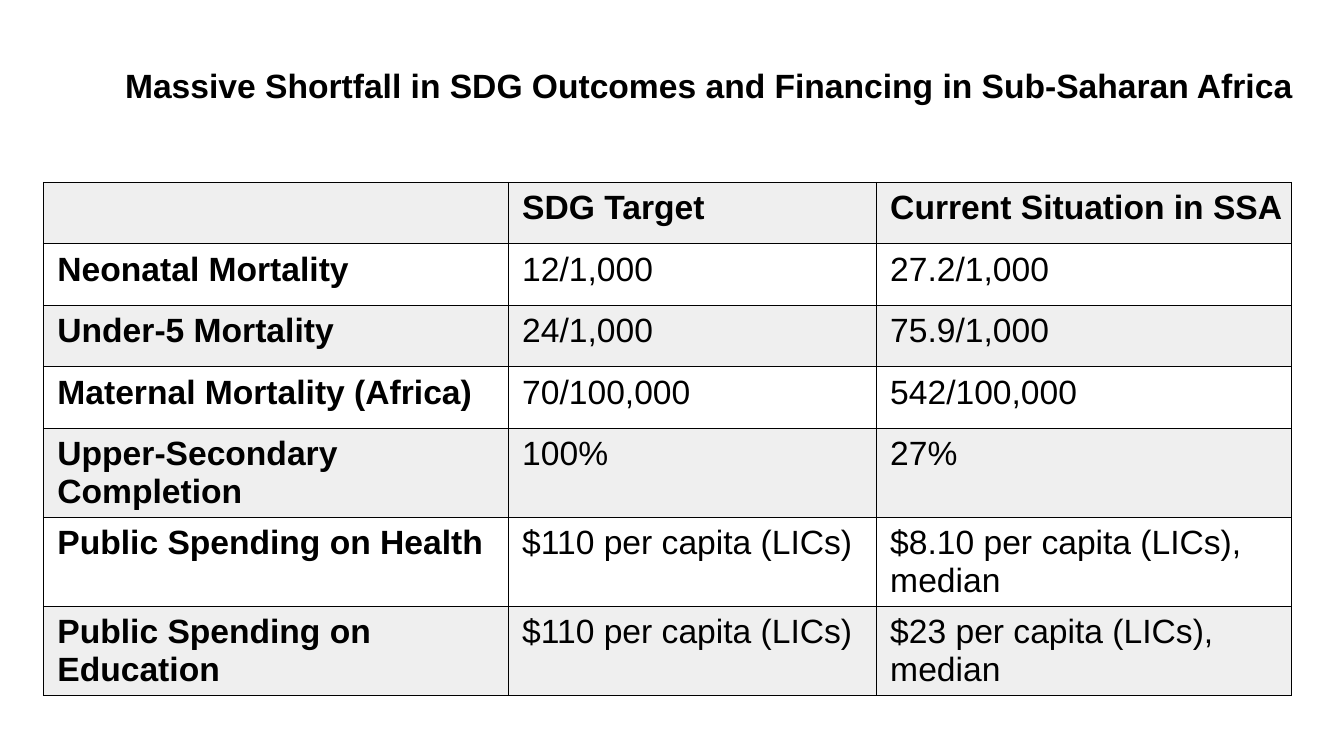
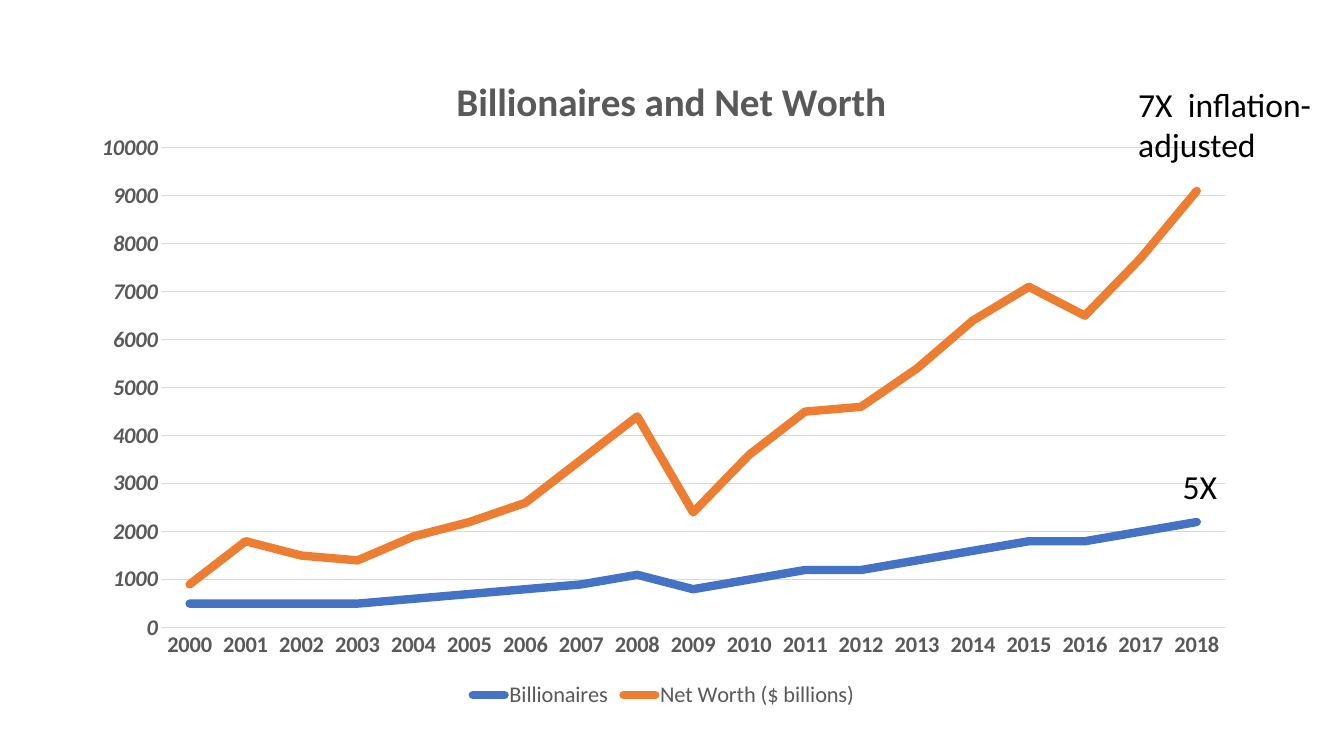
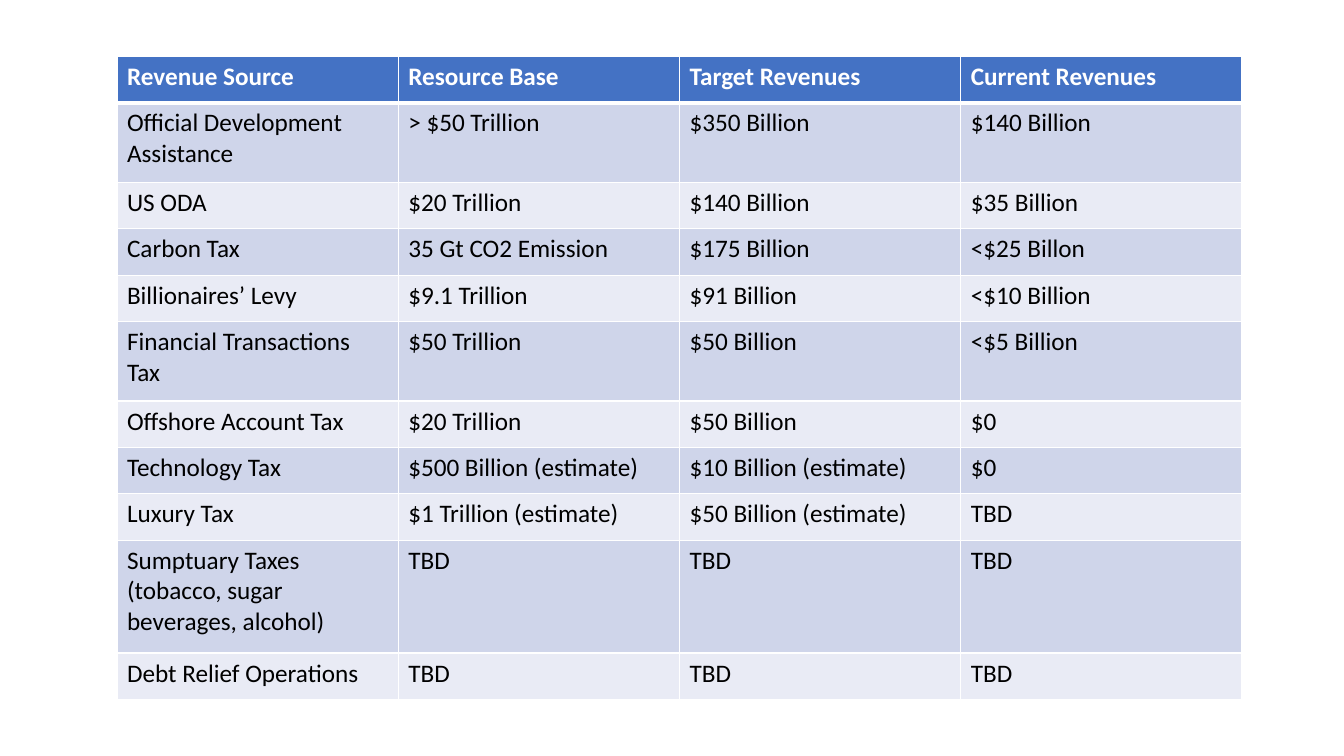
import dataclasses
import typing

import lxml.etree
import pptx
import pptx.chart.data
import pptx.dml.color
import pptx.enum.chart
import pptx.enum.text
import pptx.oxml
import pptx.oxml.ns
import pptx.util

Inches = pptx.util.Inches
Pt = pptx.util.Pt
qn = pptx.oxml.ns.qn


# Shared look
@dataclasses.dataclass(frozen=True)
class Theme:
    black: str = "000000"
    white: str = "FFFFFF"
    pale: str = "EFEFEF"
    blue: str = "4472C4"
    orange: str = "ED7D31"
    band: str = "CFD5EA"
    light: str = "E9EBF5"
    gray: str = "595959"
    rule: str = "D9D9D9"
    sans: str = "Arial"
    body: str = "Calibri"
    head: int = 28
    big: int = 24
    mid: int = 18
    small: int = 16


THEME = Theme()


class Box(typing.NamedTuple):
    left: float
    top: float
    width: float
    height: float

    def lengths(self) -> list[pptx.util.Length]:
        return [Inches(side) for side in self]


@dataclasses.dataclass(frozen=True)
class Grid:
    """A table: its place, its text and how it is drawn."""
    box: Box
    cols: list[float]
    heights: list[float]
    rows: list[tuple[str, ...]]
    face: str
    size: int
    edge: str
    fills: tuple[str, str, str]  # head row, odd rows, even rows
    ink: str                     # text colour of the head row
    pads: dict[str, float]
    rule: float = 1              # line below the head row
    bold: bool = False           # bold first column


class Note(typing.NamedTuple):
    box: Box
    lines: list[str]
    wrap: bool


class Line(typing.NamedTuple):
    name: str
    color: str
    vals: list[int]


def rgb(code: str) -> pptx.dml.color.RGBColor:
    return pptx.dml.color.RGBColor.from_string(code)


def apply(thing: typing.Any, form: dict[str, typing.Any]) -> None:
    for key, value in form.items():
        setattr(thing, key, value)


def style(font: typing.Any, face: str, size: int, color: str,
          bold: bool = False, italic: bool = False) -> None:
    apply(font, {"name": face, "size": Pt(size), "bold": bold, "italic": italic})
    font.color.rgb = rgb(color)


# Tables
def border(cell: typing.Any, side: str, color: str, width: float) -> None:
    line = lxml.etree.SubElement(cell._tc.get_or_add_tcPr(), qn(f"a:ln{side}"),
                                 w=str(Pt(width)))
    fill = lxml.etree.SubElement(line, qn("a:solidFill"))
    lxml.etree.SubElement(fill, qn("a:srgbClr"), val=color)


def draw_grid(slide: typing.Any, grid: Grid) -> None:
    table = slide.shapes.add_table(len(grid.rows), len(grid.cols),
                                   *grid.box.lengths()).table
    apply(table, {"first_row": False, "horz_banding": False})
    for col, width in zip(table.columns, grid.cols):
        col.width = Inches(width)
    for row, height in zip(table.rows, grid.heights):
        row.height = Inches(height)
    for i, texts in enumerate(grid.rows):
        fill = grid.fills[0] if i == 0 else grid.fills[2 - i % 2]
        for j, text in enumerate(texts):
            cell = table.cell(i, j)
            for side in "LRTB":
                thick = (i, side) in ((0, "B"), (1, "T"))
                border(cell, side, grid.edge, grid.rule if thick else 1)
            cell.fill.solid()
            cell.fill.fore_color.rgb = rgb(fill)
            apply(cell, {f"margin_{key}": Inches(pad) for key, pad in grid.pads.items()})
            cell.text = text
            for para in cell.text_frame.paragraphs:
                style(para.font, grid.face, grid.size,
                      THEME.black if i else grid.ink,
                      bold=i == 0 or (grid.bold and j == 0))
                for run in para.runs:
                    style(run.font, grid.face, grid.size,
                          THEME.black if i else grid.ink,
                          bold=i == 0 or (grid.bold and j == 0))


# Text
def draw_title(slide: typing.Any, text: str, box: Box) -> None:
    title = slide.shapes.title
    apply(title, dict(zip(("left", "top", "width", "height"), box.lengths())))
    frame = title.text_frame
    apply(frame, {"text": text, "word_wrap": False,
                  "vertical_anchor": pptx.enum.text.MSO_ANCHOR.MIDDLE})
    frame.paragraphs[0].alignment = pptx.enum.text.PP_ALIGN.LEFT
    style(frame.paragraphs[0].runs[0].font, THEME.sans, THEME.big, THEME.black, bold=True)


def draw_note(slide: typing.Any, note: Note) -> None:
    frame = slide.shapes.add_textbox(*note.box.lengths()).text_frame
    apply(frame, {"text": "\n".join(note.lines), "word_wrap": note.wrap})
    for para in frame.paragraphs:
        style(para.runs[0].font, THEME.body, THEME.big, THEME.black)


# Chart
def place(part: typing.Any, after: str | None, form: dict[str, str]) -> None:
    """Fix a chart part's place, as shares of the chart's size."""
    for old in part.findall(qn("c:layout")):
        part.remove(old)
    layout = pptx.oxml.parse_xml(
        '<c:layout xmlns:c="http://schemas.openxmlformats.org/drawingml/2006/chart"/>')
    manual = lxml.etree.SubElement(layout, qn("c:manualLayout"))
    for key, value in form.items():
        lxml.etree.SubElement(manual, qn(f"c:{key}"), val=value)
    if after:
        part.find(qn(after)).addnext(layout)
    else:
        part.insert(0, layout)


def draw_chart(slide: typing.Any, box: Box, title: str, cats: list[str],
               lines: list[Line]) -> None:
    data = pptx.chart.data.CategoryChartData()
    data.categories = cats
    for line in lines:
        data.add_series(line.name, line.vals)
    chart = slide.shapes.add_chart(pptx.enum.chart.XL_CHART_TYPE.LINE,
                                   *box.lengths(), data).chart
    style(chart.font, THEME.body, 10, THEME.black)
    chart.has_title = True
    chart.chart_title.text_frame.text = title
    style(chart.chart_title.text_frame.paragraphs[0].runs[0].font,
          THEME.body, THEME.head, THEME.gray, bold=True)

    chart.has_legend = True
    apply(chart.legend, {"position": pptx.enum.chart.XL_LEGEND_POSITION.BOTTOM,
                         "include_in_layout": False})
    style(chart.legend.font, THEME.body, THEME.small, THEME.gray)

    none = pptx.enum.chart.XL_TICK_MARK.NONE
    for axis, italic in ((chart.category_axis, False), (chart.value_axis, True)):
        apply(axis, {"major_tick_mark": none, "minor_tick_mark": none})
        style(axis.tick_labels.font, THEME.body, THEME.small, THEME.gray, True, italic)
    apply(chart.value_axis, {"minimum_scale": 0, "maximum_scale": 10000,
                             "major_unit": 1000, "has_major_gridlines": True})
    chart.value_axis.format.line.fill.background()
    for part in (chart.category_axis, chart.value_axis.major_gridlines):
        part.format.line.color.rgb = rgb(THEME.rule)
        part.format.line.width = Pt(0.75)

    chart.plots[0].vary_by_categories = False
    for series, line in zip(chart.plots[0].series, lines):
        series.smooth = False
        series.format.line.color.rgb = rgb(line.color)
        series.format.line.width = Pt(6)
    root = chart.element
    for stroke in root.xpath(".//c:ser/c:spPr/a:ln"):
        stroke.set("cap", "rnd")

    edge = {"xMode": "edge", "yMode": "edge"}
    place(root.xpath(".//c:plotArea")[0], None,
          {"layoutTarget": "inner", **edge,
           "x": "0.071", "y": "0.154", "w": "0.909", "h": "0.715"})
    place(root.xpath("./c:chart/c:title")[0], "c:tx", {**edge, "x": "0.317", "y": "0.035"})
    place(root.xpath(".//c:legend")[0], "c:legendPos",
          {**edge, "x": "0.33", "y": "0.947", "w": "0.34", "h": "0.05"})


# Content
GOALS = Grid(
    box=Box(0.43, 1.81, 12.38, 4.57), cols=[4.61, 3.65, 4.12],
    heights=[0.61] * 5 + [0.76] * 2,
    rows=[
        ("", "SDG Target", "Current Situation in SSA"),
        ("Neonatal Mortality", "12/1,000", "27.2/1,000"),
        ("Under-5 Mortality", "24/1,000", "75.9/1,000"),
        ("Maternal Mortality (Africa)", "70/100,000", "542/100,000"),
        ("Upper-Secondary Completion", "100%", "27%"),
        ("Public Spending on Health", "$110 per capita (LICs)",
         "$8.10 per capita (LICs), median"),
        ("Public Spending on Education", "$110 per capita (LICs)",
         "$23 per capita (LICs), median"),
    ],
    face=THEME.sans, size=THEME.big, edge=THEME.black,
    fills=(THEME.pale, THEME.white, THEME.pale), ink=THEME.black,
    pads={"left": 0.14, "right": 0.07, "top": 0.07, "bottom": 0.07}, bold=True)

FUNDS = Grid(
    box=Box(1.16, 0.56, 11.16, 6.34), cols=[2.79] * 4,
    heights=[0.13 + 0.33 * n for n in (1, 2, 1, 1, 1, 2, 1, 1, 1, 3, 1)],
    rows=[
        ("Revenue Source", "Resource Base", "Target Revenues", "Current Revenues"),
        ("Official Development Assistance", "> $50 Trillion", "$350 Billion", "$140 Billion"),
        ("US ODA", "$20 Trillion", "$140 Billion", "$35 Billion"),
        ("Carbon Tax", "35 Gt CO2 Emission", "$175 Billion", "<$25 Billon"),
        ("Billionaires’ Levy", "$9.1 Trillion", "$91 Billion", "<$10 Billion"),
        ("Financial Transactions Tax", "$50 Trillion", "$50 Billion", "<$5 Billion"),
        ("Offshore Account Tax", "$20 Trillion", "$50 Billion", "$0"),
        ("Technology Tax", "$500 Billion (estimate)", "$10 Billion (estimate)", "$0"),
        ("Luxury Tax", "$1 Trillion (estimate)", "$50 Billion (estimate)", "TBD"),
        ("Sumptuary Taxes\n(tobacco, sugar beverages, alcohol)", "TBD", "TBD", "TBD"),
        ("Debt Relief Operations", "TBD", "TBD", "TBD"),
    ],
    face=THEME.body, size=THEME.mid, edge=THEME.white,
    fills=(THEME.blue, THEME.band, THEME.light), ink=THEME.white,
    pads={"left": 0.1, "right": 0.1, "top": 0.05, "bottom": 0.05}, rule=3)

WEALTH = [
    Line("Billionaires", THEME.blue,
         [500, 500, 500, 500, 600, 700, 800, 900, 1100, 800, 1000, 1200, 1200,
          1400, 1600, 1800, 1800, 2000, 2200]),
    Line("Net Worth ($ billions)", THEME.orange,
         [900, 1800, 1500, 1400, 1900, 2200, 2600, 3500, 4400, 2400, 3600, 4500,
          4600, 5400, 6400, 7100, 6500, 7700, 9100]),
]

NOTES = [
    Note(Box(11.63, 4.57, 0.55, 0.5), ["5X"], False),
    Note(Box(11.19, 0.78, 1.98, 0.91), ["7X  inflation-", "adjusted"], True),
]


def main() -> None:
    deck = pptx.Presentation()
    apply(deck, {"slide_width": Inches(13.33), "slide_height": Inches(7.5)})
    titled, blank = deck.slide_layouts[5], deck.slide_layouts[6]

    # Goals and shortfall
    slide = deck.slides.add_slide(titled)
    draw_grid(slide, GOALS)
    draw_title(slide, "Massive Shortfall in SDG Outcomes and Financing in Sub-Saharan Africa",
               Box(1.14, 0.59, 11.81, 0.5))

    # Growth of wealth
    slide = deck.slides.add_slide(blank)
    draw_chart(slide, Box(0.78, 0.44, 11.6, 6.66), "Billionaires and Net Worth",
               [str(year) for year in range(2000, 2019)], WEALTH)
    for note in NOTES:
        draw_note(slide, note)

    # Sources of revenue
    draw_grid(deck.slides.add_slide(blank), FUNDS)
    deck.save("out.pptx")


if __name__ == "__main__":
    main()
